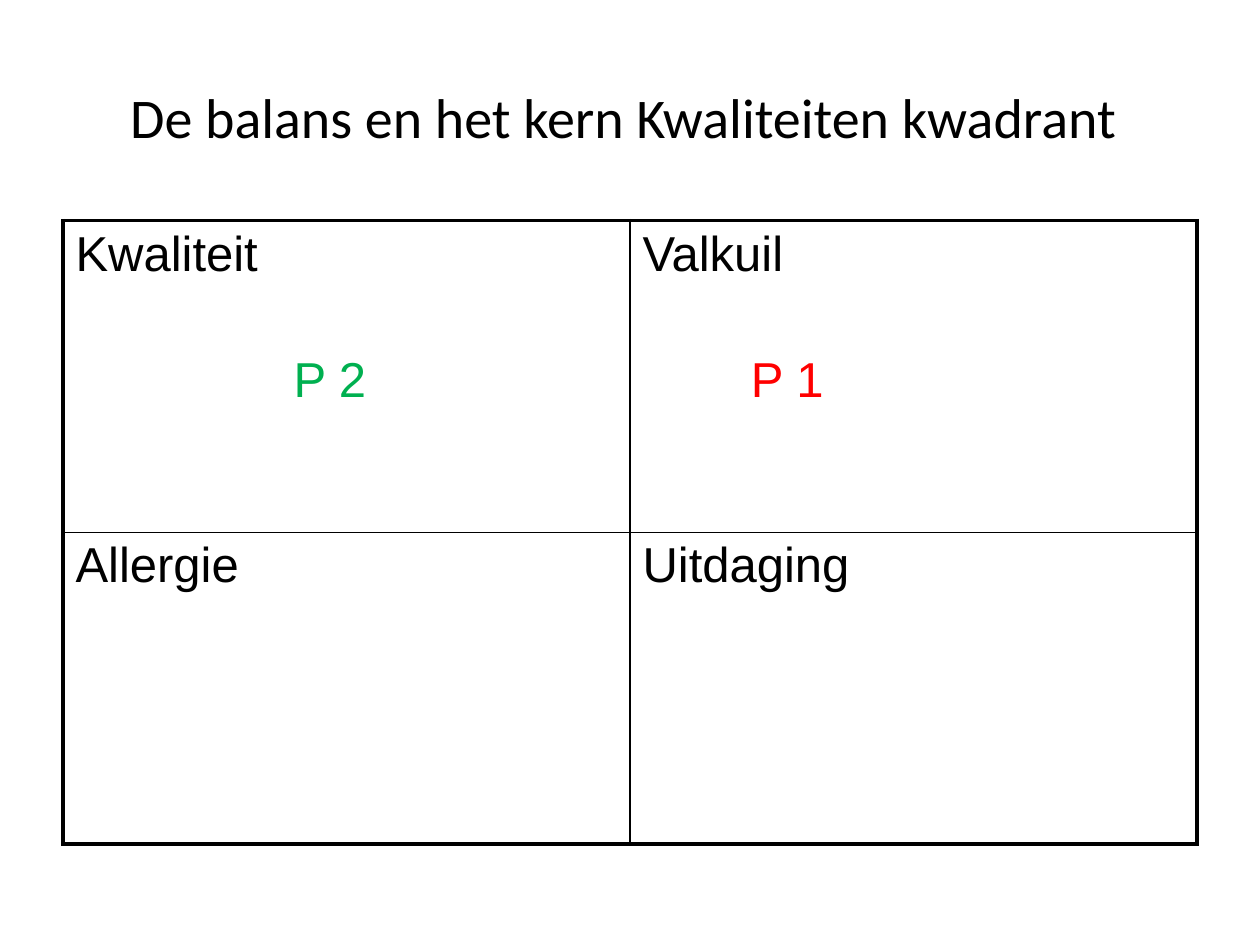
"""Build a slide with the core quality quadrant."""
from dataclasses import dataclass

import pptx
import pptx.dml.color
import pptx.enum.text
import pptx.oxml
import pptx.oxml.ns
import pptx.util

RGBColor = pptx.dml.color.RGBColor
BLACK = RGBColor(0x00, 0x00, 0x00)
GREEN = RGBColor(0x00, 0xB0, 0x50)
RED = RGBColor(0xFF, 0x00, 0x00)

WIDE = pptx.util.Inches(10)
HIGH = pptx.util.Inches(7.5)
EDGE = 0.05
SPAN = 1 - 2 * EDGE
SIDE = 2
THICK = pptx.util.Pt(2.25)
THIN = pptx.util.Pt(1)


@dataclass(frozen=True)
class Field:
    row: int
    col: int
    name: str
    mark: str = ""
    tint: RGBColor = BLACK
    inset: float = 0


FIELDS = (
    Field(0, 0, "Kwaliteit", "P 2", GREEN, 1.73),
    Field(0, 1, "Valkuil", "P 1", RED, 0.86),
    Field(1, 0, "Allergie"),
    Field(1, 1, "Uitdaging"),
)


def style(para, face: str, size: int, tint: RGBColor) -> None:
    font = para.font
    font.name, font.size, font.bold = face, pptx.util.Pt(size), False
    font.color.rgb = tint


def border(cell, row: int, col: int) -> None:
    last = SIDE - 1
    outer = {"L": col == 0, "R": col == last, "T": row == 0, "B": row == last}
    props = cell._tc.get_or_add_tcPr()
    for side, thick in outer.items():
        width = THICK if thick else THIN
        props.append(pptx.oxml.parse_xml(
            f'<a:ln{side} {pptx.oxml.ns.nsdecls("a")} w="{width}">'
            f'<a:solidFill><a:srgbClr val="{BLACK}"/></a:solidFill></a:ln{side}>'))


def draw_field(table, field: Field) -> None:
    cell = table.cell(field.row, field.col)
    border(cell, field.row, field.col)
    cell.fill.background()
    frame = cell.text_frame
    head = frame.paragraphs[0]
    head.text = field.name
    style(head, "Arial", 28, BLACK)
    if field.mark:
        para = frame.add_paragraph()
        para.text = field.mark
        para.space_before = pptx.util.Pt(41)
        style(para, "Arial", 28, field.tint)
        props = para._p.get_or_add_pPr()
        props.set("marL", str(pptx.util.Inches(field.inset)))
        props.set("indent", "0")


def draw_title(slide, text: str) -> None:
    box = slide.shapes.add_textbox(
        int(WIDE * EDGE), int(HIGH * 0.04), int(WIDE * SPAN), int(HIGH / 6))
    frame = box.text_frame
    frame.word_wrap = True
    frame.vertical_anchor = pptx.enum.text.MSO_ANCHOR.MIDDLE
    para = frame.paragraphs[0]
    para.text = text
    para.alignment = pptx.enum.text.PP_ALIGN.CENTER
    style(para, "Calibri", 32, BLACK)


def draw_table(slide) -> None:
    table = slide.shapes.add_table(
        SIDE, SIDE, int(WIDE * EDGE), pptx.util.Inches(1.75),
        int(WIDE * SPAN), int(HIGH * 0.66)).table
    table.first_row = table.horz_banding = False
    for field in FIELDS:
        draw_field(table, field)


def main() -> None:
    deck = pptx.Presentation()
    deck.slide_width, deck.slide_height = WIDE, HIGH
    slide = deck.slides.add_slide(deck.slide_layouts[6])
    draw_title(slide, "De balans en het kern Kwaliteiten kwadrant ")
    draw_table(slide)
    deck.save("out.pptx")


if __name__ == "__main__":
    main()
